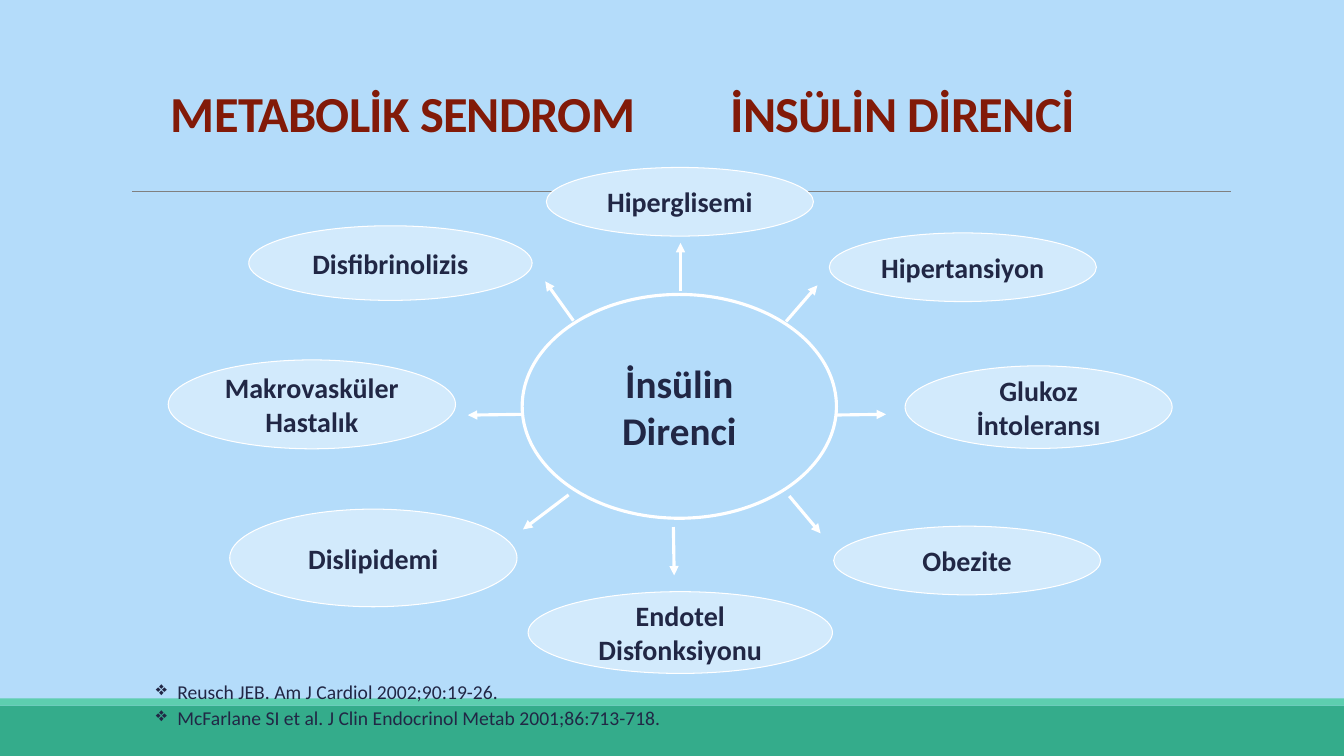
from pptx import Presentation
from pptx.dml.color import RGBColor
from pptx.enum.shapes import MSO_CONNECTOR as Connector, MSO_SHAPE as Shape
from pptx.enum.text import MSO_ANCHOR as Anchor, PP_ALIGN as Align
from pptx.oxml.ns import qn
from pptx.util import Cm, Pt
from lxml.etree import SubElement

COLORS = {
    "sky": "B4DCFA", "bubble": "D2EAFC", "white": "FFFFFF", "ink": "212745",
    "title": "821A08", "rule": "808080", "band": "34AC8B", "stripe": "5DCEAF",
}

# Label, ellipse (left, top, width, height), arrow (from x, y, to x, y), in cm
FINDINGS = [
    ("Dislipidemi", (5.79, 12.83, 7.24, 2.46), (14.33, 12.47, 13.18, 13.34)),
    ("Obezite", (21.01, 13.26, 6.73, 1.73), (19.89, 12.5, 20.68, 13.44)),
    ("Hipertansiyon", (20.9, 5.87, 6.73, 1.73), (19.81, 8.1, 20.6, 7.19)),
    ("Disfibrinolizis", (6.27, 5.69, 7.14, 1.88), (14.45, 8.08, 13.74, 7.09)),
    ("Hiperglisemi", (13.77, 4.22, 6.73, 1.73), (17.15, 7.34, 17.15, 6.12)),
    ("Endotel\nDisfonksiyonu", (13.31, 14.91, 7.67, 2.06), (16.97, 13.28, 16.99, 14.5)),
    ("Makrovasküler\nHastalık", (4.24, 9.07, 7.24, 2.24), (13.21, 10.44, 11.79, 10.46)),
    ("Glukoz\nİntoleransı", (22.81, 9.22, 6.73, 2.08), (20.9, 10.46, 22.33, 10.44)),
]
REFERENCES = [
    "Reusch JEB. Am J Cardiol 2002;90:19-26.",
    "McFarlane SI et al. J Clin Endocrinol Metab 2001;86:713-718.",
]


def rgb(name):
    return RGBColor.from_string(COLORS[name])


def write(frame, text, size=20, color="ink", bold=False, align=Align.LEFT,
          anchor=Anchor.TOP, wrap=True, leading=None, before=None):
    """Fill a text frame, one paragraph for each line of text."""
    frame.word_wrap = wrap
    frame.vertical_anchor = anchor
    for number, line in enumerate(text.split("\n")):
        para = frame.add_paragraph() if number else frame.paragraphs[0]
        para.alignment = align
        para.line_spacing = leading
        para.space_before = before
        span = para.add_run()
        span.text = line
        span.font.name = "Calibri"
        span.font.size = Pt(size)
        span.font.bold = bold
        span.font.color.rgb = rgb(color)
    return frame.paragraphs


class Page:
    def __init__(self, deck):
        self.slide = deck.slides.add_slide(deck.slide_layouts[6])
        self.shapes = self.slide.shapes
        self.slide.background.fill.solid()
        self.slide.background.fill.fore_color.rgb = rgb("sky")

    def shape(self, kind, place, fill, line=None, width=0.75):
        shape = self.shapes.add_shape(kind, *map(Cm, place))
        shape.shadow.inherit = False
        shape.fill.solid()
        shape.fill.fore_color.rgb = rgb(fill)
        if line:
            shape.line.color.rgb = rgb(line)
            shape.line.width = Pt(width)
        else:
            shape.line.fill.background()
        return shape

    def ellipse(self, text, place, fill="bubble", width=0.75, size=20):
        shape = self.shape(Shape.OVAL, place, fill, "white", width)
        write(shape.text_frame, text, size=size, bold=True, align=Align.CENTER,
              anchor=Anchor.MIDDLE, wrap=False)

    def line(self, ends, color="white", width=2.25, arrow=True):
        line = self.shapes.add_connector(Connector.STRAIGHT, *map(Cm, ends))
        line.line.color.rgb = rgb(color)
        line.line.width = Pt(width)
        if arrow:
            SubElement(line.line._get_or_add_ln(), qn("a:tailEnd"), type="triangle")
        SubElement(line._element.spPr, qn("a:effectLst"))

    def text(self, text, place, **style):
        box = self.shapes.add_textbox(*map(Cm, place))
        return write(box.text_frame, text, **style)

    def title(self, text, place, tab):
        """Add a title whose two halves are set apart by a tab stop."""
        para = self.text(text, place, size=36, color="title", bold=True,
                         anchor=Anchor.BOTTOM, leading=0.85)[0]
        stops = SubElement(para._p.get_or_add_pPr(), qn("a:tabLst"))
        SubElement(stops, qn("a:tab"), pos=str(Cm(tab)), algn="l")
        para.runs[0].font._element.set("spc", "-50")

    def bullets(self, lines, place, indent):
        paras = self.text("\n".join(lines), place, size=14, leading=0.7, before=Pt(7))
        for para in paras:
            props = para._p.get_or_add_pPr()
            props.set("marL", str(Cm(indent)))
            props.set("indent", str(-Cm(indent)))
            SubElement(props, qn("a:buChar"), char="❖")


def main():
    deck = Presentation()
    deck.slide_width, deck.slide_height = Cm(33.87), Cm(19.05)
    page = Page(deck)

    page.shape(Shape.RECTANGLE, (0, 17.78, 33.87, 1.27), "band")
    page.shape(Shape.RECTANGLE, (0, 17.6, 33.87, 0.18), "stripe")
    page.line((3.33, 4.83, 31.01, 4.83), "rule", 0.5, arrow=False)

    for _, _, arrow in FINDINGS:
        page.line(arrow)
    page.ellipse("İnsülin\nDirenci", (13.16, 7.42, 7.92, 5.64), "sky", 2.25, 28)
    for label, place, _ in FINDINGS:
        page.ellipse(label, place)

    page.bullets(REFERENCES, (3.68, 17.17, 25.98, 1.88), indent=0.54)
    page.title("METABOLİK SENDROM\tİNSÜLİN DİRENCİ", (4.06, 0.71, 25.7, 3.02), tab=14.1)
    deck.save("out.pptx")


if __name__ == "__main__":
    main()
